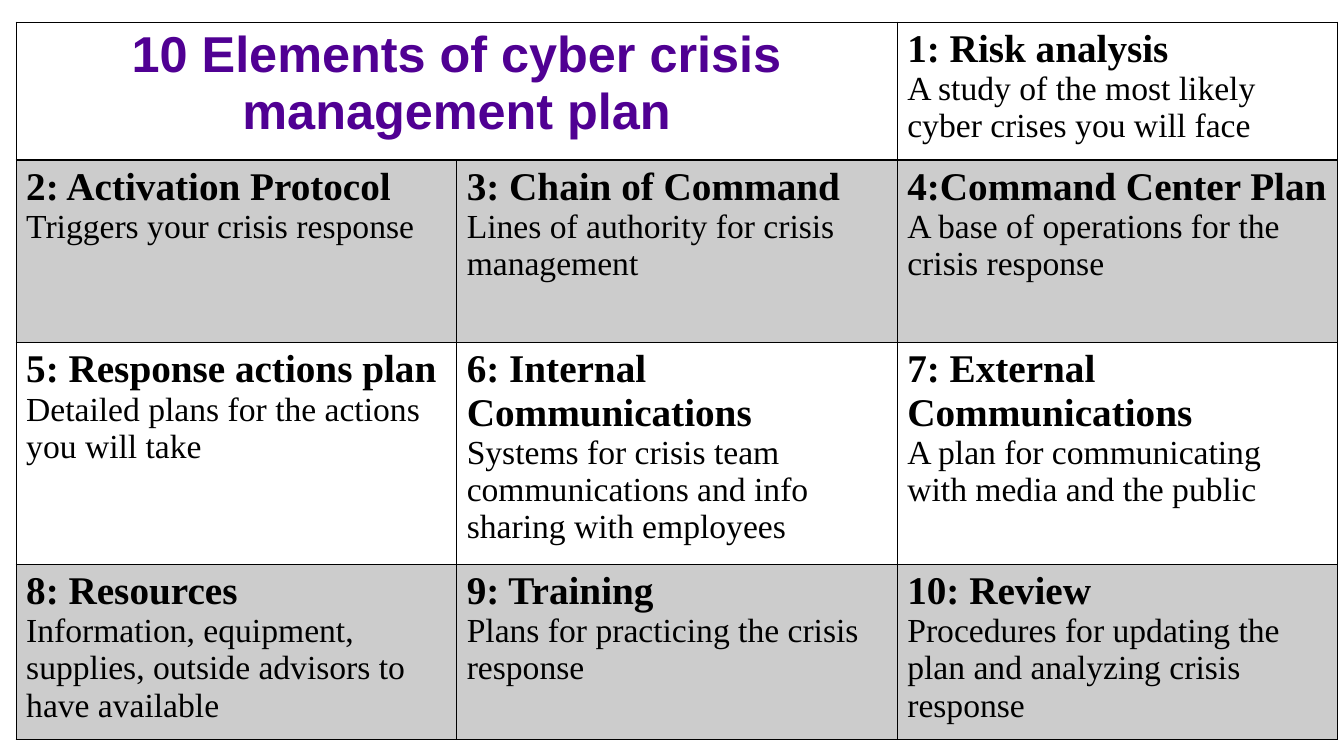
import pptx
import pptx.util
import pptx.dml.color
import pptx.enum.text
import pptx.oxml
import pptx.oxml.ns

COLORS = {"ink": "000000", "title": "500093"}
TITLE = "10 Elements of cyber crisis management plan"
ELEMENTS = [
    ("1: Risk analysis", "A study of the most likely cyber crises you will face"),
    ("2: Activation Protocol", "Triggers your crisis response"),
    ("3: Chain of Command", "Lines of authority for crisis management"),
    ("4:Command Center Plan", "A base of operations for the crisis response"),
    ("5: Response actions plan", "Detailed plans for the actions you will take"),
    ("6: Internal Communications",
     "Systems for crisis team communications and info sharing with employees"),
    ("7: External Communications", "A plan for communicating with media and the public"),
    ("8: Resources", "Information, equipment, supplies, outside advisors to have available"),
    ("9: Training", "Plans for practicing the crisis response"),
    ("10: Review", "Procedures for updating the plan and analyzing crisis response"),
]
COLUMN_WIDTH = 4.37
ROW_HEIGHTS = [1.37, 1.81, 2.2, 1.74]


class PlanPage:
    """Holds the style and the current slide of the crisis plan."""

    def __init__(self, deck):
        self.page = deck.slides.add_slide(deck.slide_layouts[6])

    def grid(self, left, top, column_width, column_count, row_heights):
        frame = self.page.shapes.add_table(
            len(row_heights), column_count,
            pptx.util.Inches(left), pptx.util.Inches(top),
            pptx.util.Inches(column_width * column_count),
            pptx.util.Inches(sum(row_heights)))
        table = frame.table
        table.first_row = False
        table.horz_banding = False
        for column in table.columns:
            column.width = pptx.util.Inches(column_width)
        for row, height in zip(table.rows, row_heights):
            row.height = pptx.util.Inches(height)
        return table

    def borders(self, cell, **widths):
        properties = cell._tc.get_or_add_tcPr()
        for side in "LRTB":
            width = pptx.util.Pt(widths.get(side, 1))
            properties.append(pptx.oxml.parse_xml(
                f'<a:ln{side} {pptx.oxml.ns.nsdecls("a")} w="{width}"><a:solidFill>'
                f'<a:srgbClr val="{COLORS["ink"]}"/></a:solidFill></a:ln{side}>'))

    def shade(self, cell, percent):
        if not percent:
            cell.fill.background()
            return
        cell.fill.solid()
        cell.fill.fore_color.rgb = pptx.dml.color.RGBColor.from_string(COLORS["ink"])
        color = cell._tc.tcPr.find(pptx.oxml.ns.qn("a:solidFill"))[0]
        color.append(pptx.oxml.parse_xml(
            f'<a:alpha {pptx.oxml.ns.nsdecls("a")} val="{percent * 1000}"/>'))

    def line(self, para, text, size, bold=True, font="Times New Roman", color="ink"):
        para.text = text
        para.font.size = pptx.util.Pt(size)
        para.font.bold = bold
        para.font.name = font
        para.font.color.rgb = pptx.dml.color.RGBColor.from_string(COLORS[color])

    def title(self, cell, text):
        para = cell.text_frame.paragraphs[0]
        para.alignment = pptx.enum.text.PP_ALIGN.CENTER
        self.line(para, text, 36, font="Arial", color="title")

    def element(self, cell, heading, description):
        self.line(cell.text_frame.paragraphs[0], heading, 28)
        self.line(cell.text_frame.add_paragraph(), description, 24, bold=False)


def main():
    deck = pptx.Presentation()
    deck.slide_width = pptx.util.Inches(13.33)
    deck.slide_height = pptx.util.Inches(7.5)
    plan = PlanPage(deck)
    table = plan.grid(0.16, 0.22, COLUMN_WIDTH, 3, ROW_HEIGHTS)
    for row_index, row in enumerate(table.rows):
        edge = {0: {"B": 2}, 1: {"T": 2}}.get(row_index, {})
        for cell in row.cells:
            plan.borders(cell, **edge)
            plan.shade(cell, 20 if row_index % 2 else 0)
    table.cell(0, 0).merge(table.cell(0, 1))
    plan.title(table.cell(0, 0), TITLE)
    for position, (heading, description) in enumerate(ELEMENTS, start=2):
        plan.element(table.cell(*divmod(position, 3)), heading, description)
    deck.save("out.pptx")


if __name__ == "__main__":
    main()
